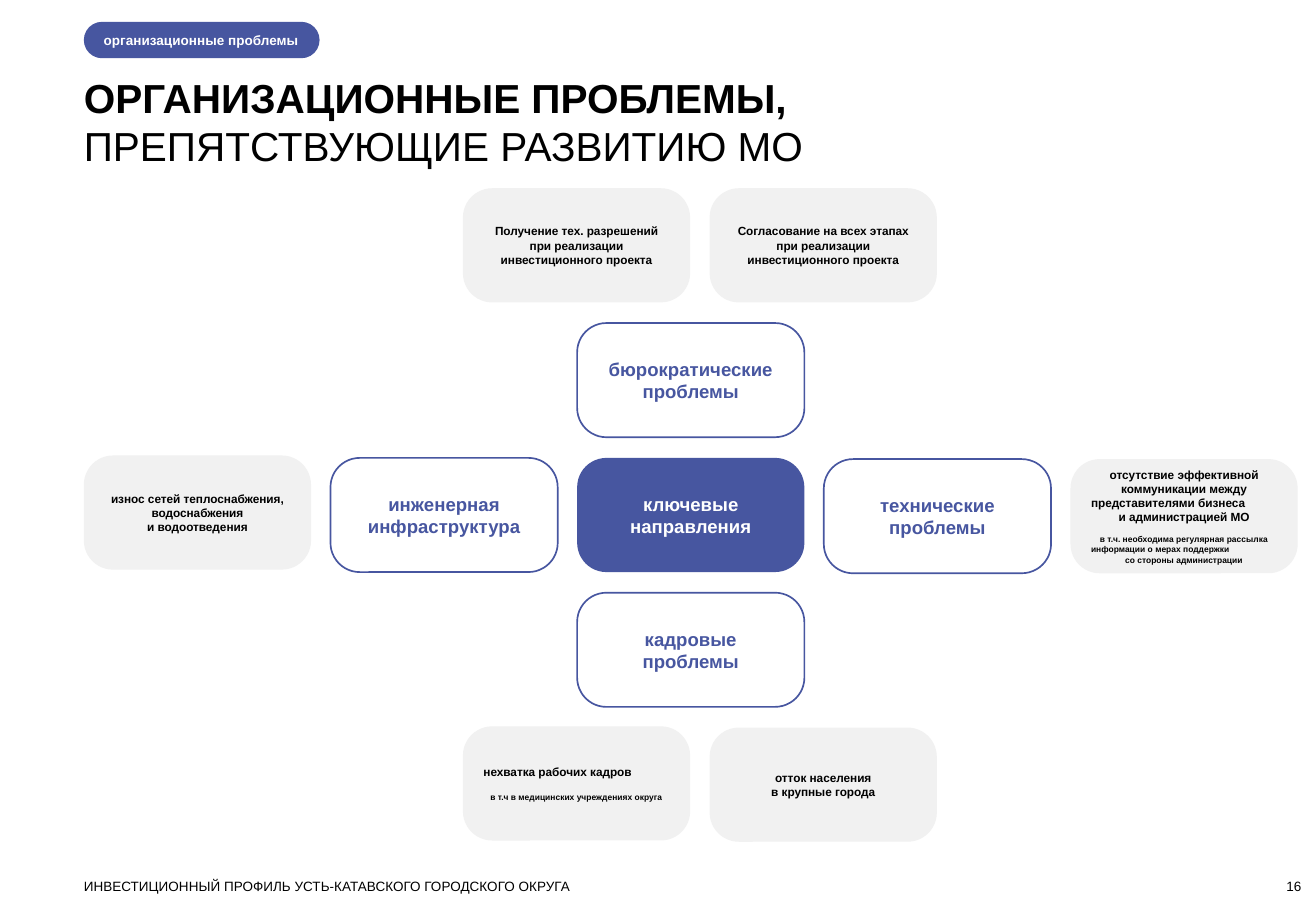
"""Slide on the organisational problems that hold back a municipality."""
from pptx import Presentation
from pptx.dml.color import RGBColor
from pptx.enum.shapes import MSO_SHAPE
from pptx.enum.text import MSO_ANCHOR, PP_ALIGN
from pptx.util import Inches, Pt

BLUE = RGBColor(0x47, 0x56, 0xA0)
GREY = RGBColor(0xF1, 0xF1, 0xF1)
BLACK = RGBColor(0, 0, 0)
WHITE = RGBColor(255, 255, 255)
LEFT, MID, RIGHT = PP_ALIGN.LEFT, PP_ALIGN.CENTER, PP_ALIGN.RIGHT

deck = Presentation()
deck.slide_width, deck.slide_height = Inches(10.83), Inches(7.5)
slide = deck.slides.add_slide(deck.slide_layouts[6])


def write(frame, lines, color):
    """Fill a frame with (text, size, bold, align, space before) lines."""
    frame.word_wrap = True
    for i, (text, size, bold, align, gap) in enumerate(lines):
        para = frame.paragraphs[0] if i == 0 else frame.add_paragraph()
        para.text = text
        para.alignment = align
        if gap:
            para.space_before = Pt(gap)
        font = para.font
        font.name, font.size, font.bold = "Arial", Pt(size), bold
        font.color.rgb = color


def card(box, round_by, fill, edge):
    """Add a rounded card and return its text frame."""
    shape = slide.shapes.add_shape(MSO_SHAPE.ROUNDED_RECTANGLE, *map(Inches, box))
    shape.adjustments[0] = round_by
    shape.shadow.inherit = False
    if fill is None:
        shape.fill.background()
    else:
        shape.fill.solid()
        shape.fill.fore_color.rgb = fill
    if edge is None:
        shape.line.fill.background()
    else:
        shape.line.color.rgb = edge
        shape.line.width = Pt(1)
    shape.text_frame.vertical_anchor = MSO_ANCHOR.MIDDLE
    return shape.text_frame


labels = [
    ((0.69, 0.6, 10.02, 0.81), MSO_ANCHOR.TOP, [
        ("ОРГАНИЗАЦИОННЫЕ ПРОБЛЕМЫ,", 24, True, LEFT, 0),
        ("ПРЕПЯТСТВУЮЩИЕ РАЗВИТИЮ МО", 24, False, LEFT, 0)]),
    ((0.69, 7.23, 8, 0.13), MSO_ANCHOR.TOP, [
        ("ИНВЕСТИЦИОННЫЙ ПРОФИЛЬ УСТЬ-КАТАВСКОГО ГОРОДСКОГО ОКРУГА",
         8, False, LEFT, 0)]),
    ((9.91, 7.23, 0.8, 0.13), MSO_ANCHOR.BOTTOM, [("16", 8, False, RIGHT, 0)]),
]
for box, anchor, lines in labels:
    frame = slide.shapes.add_textbox(*map(Inches, box)).text_frame
    frame.margin_left = frame.margin_right = 0
    frame.margin_top = frame.margin_bottom = 0
    frame.vertical_anchor = anchor
    write(frame, lines, BLACK)

tag = card((0.69, 0.18, 1.94, 0.3), 0.5, BLUE, None)
tag.margin_left = Inches(0.12)
tag.margin_right = tag.margin_top = tag.margin_bottom = 0
write(tag, [("организационные проблемы", 8, True, LEFT, 0)], WHITE)

WIDE, HIGH, CURVE = 1.87, 0.94, 0.256
cols = [0.69 + 2.03 * i for i in range(5)]
rows = [1.55 + 1.11 * i for i in range(5)]
pair = [3.81, 5.84]

themes = [
    (cols[2], rows[1], "бюрократические проблемы", None, BLUE),
    (cols[1], rows[2], "инженерная инфраструктура", None, BLUE),
    (cols[2], rows[2], "ключевые направления", BLUE, WHITE),
    (cols[3], 3.78, "технические проблемы", None, BLUE),
    (cols[2], rows[3], "кадровые проблемы", None, BLUE),
]
for left, top, text, fill, color in themes:
    edge = BLUE if fill is None else None
    frame = card((left, top, WIDE, HIGH), CURVE, fill, edge)
    write(frame, [(text, 11, True, MID, 0)], color)

issues = [
    (pair[0], rows[0], [
        ("Получение тех. разрешений при реализации инвестиционного проекта",
         7, True, MID, 0)]),
    (pair[1], rows[0], [
        ("Согласование на всех этапах при реализации инвестиционного проекта",
         7, True, MID, 0)]),
    (cols[0], 3.75, [
        ("износ сетей теплоснабжения, водоснабжения", 7, True, MID, 0),
        ("и водоотведения", 7, True, MID, 0)]),
    (cols[4], 3.78, [
        ("отсутствие эффективной", 7, True, MID, 0),
        ("коммуникации между", 7, True, MID, 0),
        ("представителями бизнеса", 7, True, LEFT, 0),
        ("и администрацией МО", 7, True, MID, 0),
        ("в т.ч. необходима регулярная рассылка", 5, True, MID, 6),
        ("информации о мерах поддержки", 5, True, LEFT, 0),
        ("со стороны администрации", 5, True, MID, 0)]),
    (pair[0], 5.98, [
        ("нехватка рабочих кадров", 7, True, LEFT, 0),
        ("в т.ч в медицинских учреждениях округа", 5, True, MID, 8)]),
    (pair[1], rows[4], [
        ("отток населения", 7, True, MID, 0),
        ("в крупные города", 7, True, MID, 0)]),
]
for left, top, lines in issues:
    frame = card((left, top, WIDE, HIGH), CURVE, GREY, None)
    write(frame, lines, BLACK)

deck.save("out.pptx")
